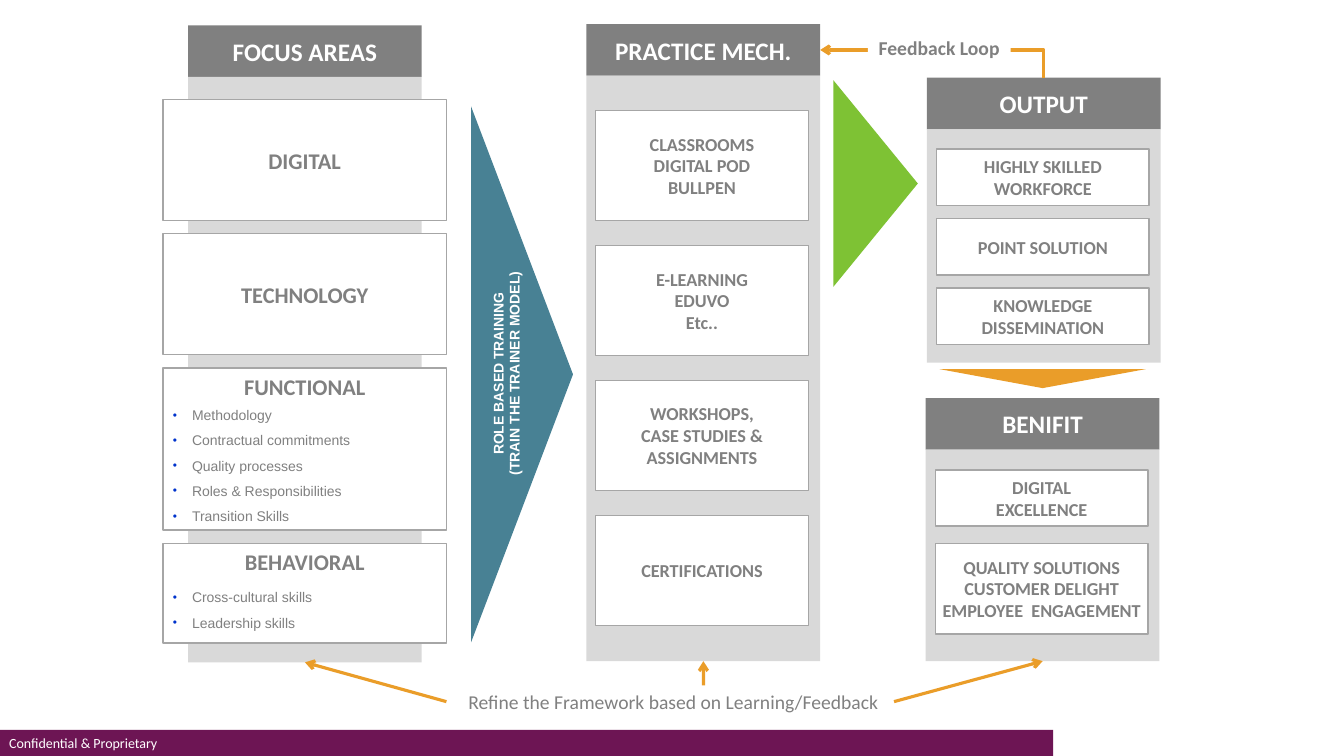
import dataclasses

import lxml.etree
import pptx
import pptx.dml.color
import pptx.enum.shapes
import pptx.enum.text
import pptx.oxml.ns
import pptx.util

Cm = pptx.util.Cm
Pt = pptx.util.Pt
qn = pptx.oxml.ns.qn
SHAPE = pptx.enum.shapes.MSO_SHAPE
CONNECTOR = pptx.enum.shapes.MSO_CONNECTOR
ALIGN = pptx.enum.text.PP_ALIGN
ANCHOR = pptx.enum.text.MSO_ANCHOR
TOP, BOTTOM, RIGHT = 0, 2, 3


def rgb(color):
    return pptx.dml.color.RGBColor.from_string(color)


@dataclasses.dataclass(frozen=True)
class Theme:
    white: str = "FFFFFF"
    grey: str = "808080"
    panel: str = "D9D9D9"
    border: str = "A6A6A6"
    teal: str = "488194"
    green: str = "7EC234"
    orange: str = "EA9D29"
    plum: str = "6D1554"
    bullet: str = "0033CC"
    heading: str = "Calibri"
    body: str = "Arial"
    header_size: int = 18
    area_size: int = 16
    label_size: int = 14
    item_size: int = 13
    small_size: int = 10


class Deck:
    column_width = 5.89
    header_height = 1.3

    def __init__(self, theme):
        self.theme = theme
        self.prs = pptx.Presentation()
        self.prs.slide_width = Cm(33.87)
        self.prs.slide_height = Cm(19.05)
        self.slide = self.prs.slides.add_slide(self.prs.slide_layouts[6])

    def shape(self, kind, box, fill, line=None, rotation=0):
        sp = self.slide.shapes.add_shape(kind, *map(Cm, box))
        sp.shadow.inherit = False
        sp.rotation = rotation
        sp.fill.solid()
        sp.fill.fore_color.rgb = rgb(fill)
        if line:
            sp.line.color.rgb = rgb(line)
            sp.line.width = Pt(1)
        else:
            sp.line.fill.background()
        return sp

    def set_text(self, sp, text, size, color, bold=True, font=None, align=ALIGN.CENTER):
        tf = sp.text_frame
        tf.text = text
        tf.word_wrap = False
        for p in tf.paragraphs:
            p.alignment = align
            for r in p.runs:
                r.font.name = font or self.theme.heading
                r.font.size = Pt(size)
                r.font.bold = bold
                r.font.color.rgb = rgb(color)
        return tf

    def text(self, box, *args, **style):
        sp = self.slide.shapes.add_textbox(*map(Cm, box))
        self.set_text(sp, *args, **style)
        return sp

    def column(self, title, left, top, bottom):
        t = self.theme
        body_top = top + self.header_height
        header = self.shape(SHAPE.RECTANGLE, (left, top, self.column_width, self.header_height), t.grey)
        self.set_text(header, title, t.header_size, t.white)
        body = self.shape(SHAPE.RECTANGLE, (left, body_top, self.column_width, bottom - body_top), t.panel)
        return header, body

    def stack(self, left, top, width, gap, items, size):
        """Boxes one below the other; returns them in order."""
        boxes = []
        for height, label in items:
            sp = self.shape(SHAPE.RECTANGLE, (left, top, width, height), self.theme.white, self.theme.border)
            self.set_text(sp, label, size, self.theme.grey)
            boxes.append(sp)
            top += height + gap
        return boxes

    def bullets(self, box, lines):
        t = self.theme
        sp = self.text(box, "\n".join(lines), t.small_size, t.grey, bold=False, font=t.body, align=ALIGN.LEFT)
        sp.text_frame.word_wrap = True
        for p in sp.text_frame.paragraphs:
            p.line_spacing = 1.5
            pPr = p._p.get_or_add_pPr()
            pPr.set("marL", str(Cm(0.48)))
            pPr.set("indent", str(-Cm(0.48)))
            color = lxml.etree.SubElement(pPr, qn("a:buClr"))
            lxml.etree.SubElement(color, qn("a:srgbClr"), val=t.bullet)
            lxml.etree.SubElement(pPr, qn("a:buSzPct"), val="85000")
            lxml.etree.SubElement(pPr, qn("a:buFont"), typeface=t.body)
            lxml.etree.SubElement(pPr, qn("a:buChar"), char="•")

    def arrow(self, kind, start, end, arrow_at):
        """arrow_at is headEnd for the start and tailEnd for the end."""
        cx = self.slide.shapes.add_connector(kind, *map(Cm, start + end))
        cx.line.color.rgb = rgb(self.theme.orange)
        cx.line.width = Pt(2.25)
        spPr = cx._element.spPr
        lxml.etree.SubElement(spPr.find(qn("a:ln")), qn("a:" + arrow_at), type="arrow")
        lxml.etree.SubElement(spPr, qn("a:effectLst"))
        return cx


def main():
    t = Theme()
    deck = Deck(t)

    # Footer
    footer = deck.shape(SHAPE.RECTANGLE, (0, 18.39, 26.54, 0.66), t.plum)
    tf = deck.set_text(footer, "Confidential & Proprietary", t.small_size, t.white, bold=False, align=ALIGN.LEFT)
    tf.margin_left = Cm(0.23)

    # Focus areas
    _, focus = deck.column("FOCUS AREAS", 4.74, 0.64, 16.69)
    areas = [(3.05, "DIGITAL"), (3.05, "TECHNOLOGY"), (4.09, "FUNCTIONAL"), (2.51, "BEHAVIORAL")]
    area_boxes = deck.stack(4.11, 2.51, 7.14, 0.33, areas, t.area_size)
    for sp in area_boxes[2:]:
        sp.text_frame.vertical_anchor = ANCHOR.TOP
    deck.bullets((4.11, 9.91, 7.11, 3.45), [
        "Methodology", "Contractual commitments", "Quality processes",
        "Roles & Responsibilities", "Transition Skills"])
    deck.bullets((4.11, 14.5, 7.11, 1.55), ["Cross-cultural skills", "Leadership skills"])

    # Practice mechanisms
    practice_header, practice = deck.column("PRACTICE MECH.", 14.78, 0.61, 16.66)
    mechanisms = ["CLASSROOMS\nDIGITAL POD\nBULLPEN", "E-LEARNING\nEDUVO\nEtc..",
                  "WORKSHOPS,\nCASE STUDIES &\nASSIGNMENTS", "CERTIFICATIONS"]
    deck.stack(15.01, 2.79, 5.36, 0.63, [(2.77, label) for label in mechanisms], t.item_size)

    # Role based training
    deck.shape(SHAPE.ISOSCELES_TRIANGLE, (6.4, 8.15, 13.51, 2.57), t.teal, rotation=90)
    training = deck.text((9.65, 8.92, 6.35, 0.99), "ROLE BASED TRAINING\n(TRAIN THE TRAINER MODEL)",
                         t.small_size, t.white, font=t.body)
    training.rotation = 270
    training.text_frame.word_wrap = True
    for p in training.text_frame.paragraphs:
        p.line_spacing = 0.7
    training.text_frame.paragraphs[1].space_before = Pt(3)

    # Output and benefit
    output_header, _ = deck.column("OUTPUT", 23.36, 1.96, 9.14)
    outputs = ["HIGHLY SKILLED\nWORKFORCE", "POINT SOLUTION", "KNOWLEDGE\nDISSEMINATION"]
    deck.stack(23.6, 3.76, 5.36, 0.33, [(1.42, label) for label in outputs], t.item_size)
    _, benefit = deck.column("BENIFIT", 23.33, 10.03, 16.66)
    benefits = [(1.42, "DIGITAL\nEXCELLENCE"),
                (2.29, "QUALITY SOLUTIONS\nCUSTOMER DELIGHT\nEMPLOYEE  ENGAGEMENT")]
    deck.stack(23.57, 11.84, 5.36, 0.43, benefits, t.item_size)

    # Flow triangles
    deck.shape(SHAPE.ISOSCELES_TRIANGLE, (19.46, 3.56, 5.21, 2.13), t.green, rotation=90)
    deck.shape(SHAPE.ISOSCELES_TRIANGLE, (23.67, 9.3, 5.21, 0.48), t.orange, rotation=180)

    # Refinement arrows
    deck.text((4.72, 17.27, 24.51, 0.86), "Refine the Framework based on Learning/Feedback",
              t.label_size, t.grey, bold=False).text_frame.word_wrap = True
    for start, column in [((22.53, 17.68), benefit), ((11.25, 17.68), focus), ((17.73, 17.27), practice)]:
        deck.arrow(CONNECTOR.STRAIGHT, start, start, "tailEnd").end_connect(column, BOTTOM)

    # Feedback loop
    loop = deck.arrow(CONNECTOR.ELBOW, (20.67, 1.26), (26.31, 1.96), "headEnd")
    loop._element.spPr.find(qn("a:prstGeom")).set("prst", "bentConnector2")
    loop.begin_connect(practice_header, RIGHT)
    loop.end_connect(output_header, TOP)
    label = deck.shape(SHAPE.RECTANGLE, (21.87, 0.76, 3.6, 0.86), t.white)
    deck.set_text(label, "Feedback Loop", t.label_size, t.grey)

    deck.prs.save("out.pptx")


if __name__ == "__main__":
    main()
